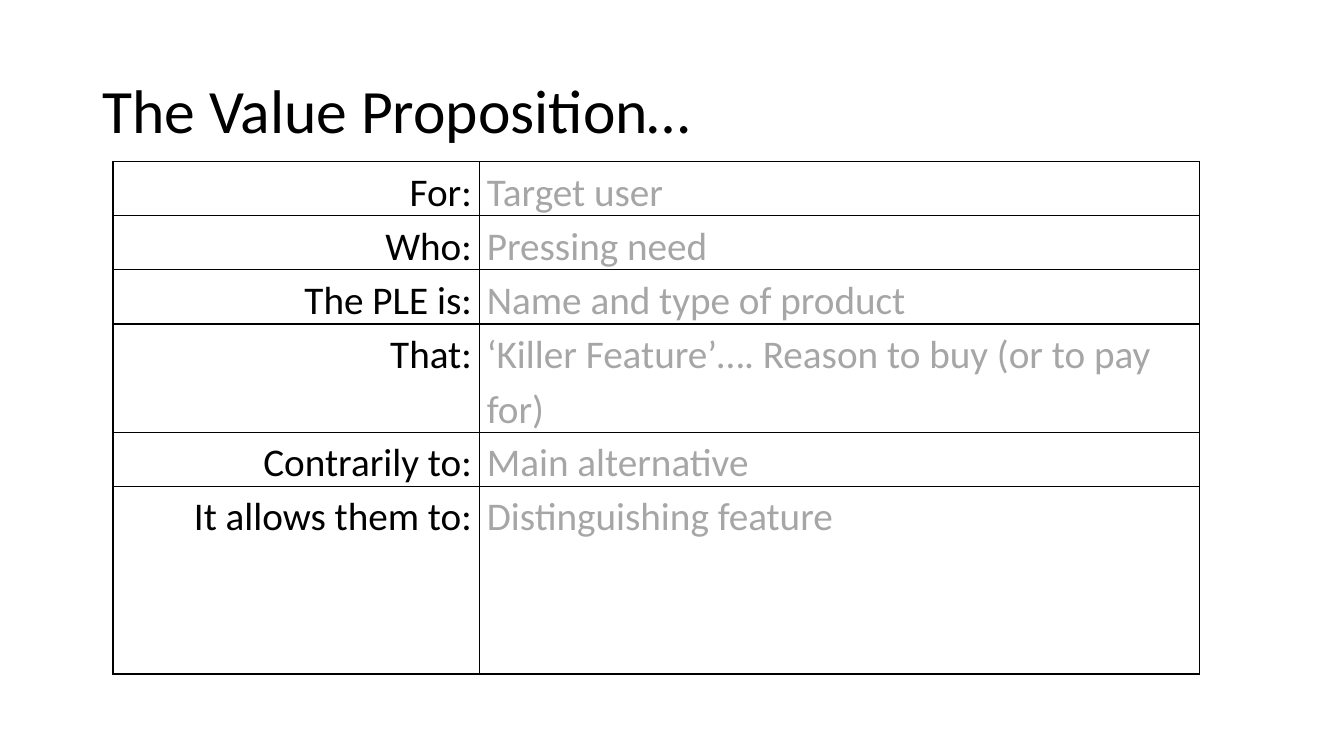
import pptx
import pptx.dml.color
import pptx.enum.text
import pptx.oxml
import pptx.oxml.ns
import pptx.util
from pptx.util import Cm

ALIGN = pptx.enum.text.PP_ALIGN
BLACK, GREY = "000000", "A6A6A6"


def style(para, size, color, spacing):
    para.font.name = "Calibri"
    para.font.size = pptx.util.Pt(size)
    para.font.bold = False
    para.font.color.rgb = pptx.dml.color.RGBColor.from_string(color)
    para.line_spacing = spacing


def add_borders(cell, color, width):
    properties = cell._tc.get_or_add_tcPr()
    for position, side in enumerate(("lnL", "lnR", "lnT", "lnB")):
        line = pptx.oxml.parse_xml(
            f'<a:{side} {pptx.oxml.ns.nsdecls("a")} w="{pptx.util.Pt(width)}">'
            f'<a:solidFill><a:srgbClr val="{color}"/></a:solidFill></a:{side}>'
        )
        properties.insert(position, line)


deck = pptx.Presentation()
deck.slide_width, deck.slide_height = Cm(33.87), Cm(19.05)
page = deck.slides.add_slide(deck.slide_layouts[6])

# Title
title = page.shapes.add_textbox(Cm(2.33), Cm(1.01), Cm(29.21), Cm(3.68)).text_frame
title.word_wrap = True
title.vertical_anchor = pptx.enum.text.MSO_ANCHOR.MIDDLE
title.text = "The Value Proposition…"
style(title.paragraphs[0], 44, BLACK, 0.9)

# Value proposition table
proposition = [
    ("For:", "Target user"),
    ("Who:", "Pressing need"),
    ("The PLE is:", "Name and type of product"),
    ("That:", "‘Killer Feature’…. Reason to buy (or to pay for)"),
    ("Contrarily to:", "Main alternative"),
    ("It allows them to:", "Distinguishing feature"),
]
column_widths = [9.23, 18.15]
row_heights = [0.7] * 5 + [4.73]

table = page.shapes.add_table(
    len(proposition), 2, Cm(2.85), Cm(4.07),
    Cm(sum(column_widths)), Cm(sum(row_heights)),
).table
table.first_row = False
table.horz_banding = False
for column, width in zip(table.columns, column_widths):
    column.width = Cm(width)

for row, height, texts in zip(table.rows, row_heights, proposition):
    row.height = Cm(height)
    for cell, text, color, alignment in zip(
        row.cells, texts, (BLACK, GREY), (ALIGN.RIGHT, ALIGN.LEFT)
    ):
        cell.text = text
        cell.margin_left = cell.margin_right = Cm(0.19)
        cell.margin_top = cell.margin_bottom = 0
        cell.fill.background()
        add_borders(cell, BLACK, 1)
        para = cell.text_frame.paragraphs[0]
        para.alignment = alignment
        style(para, 28, color, 1.15)

deck.save("out.pptx")
